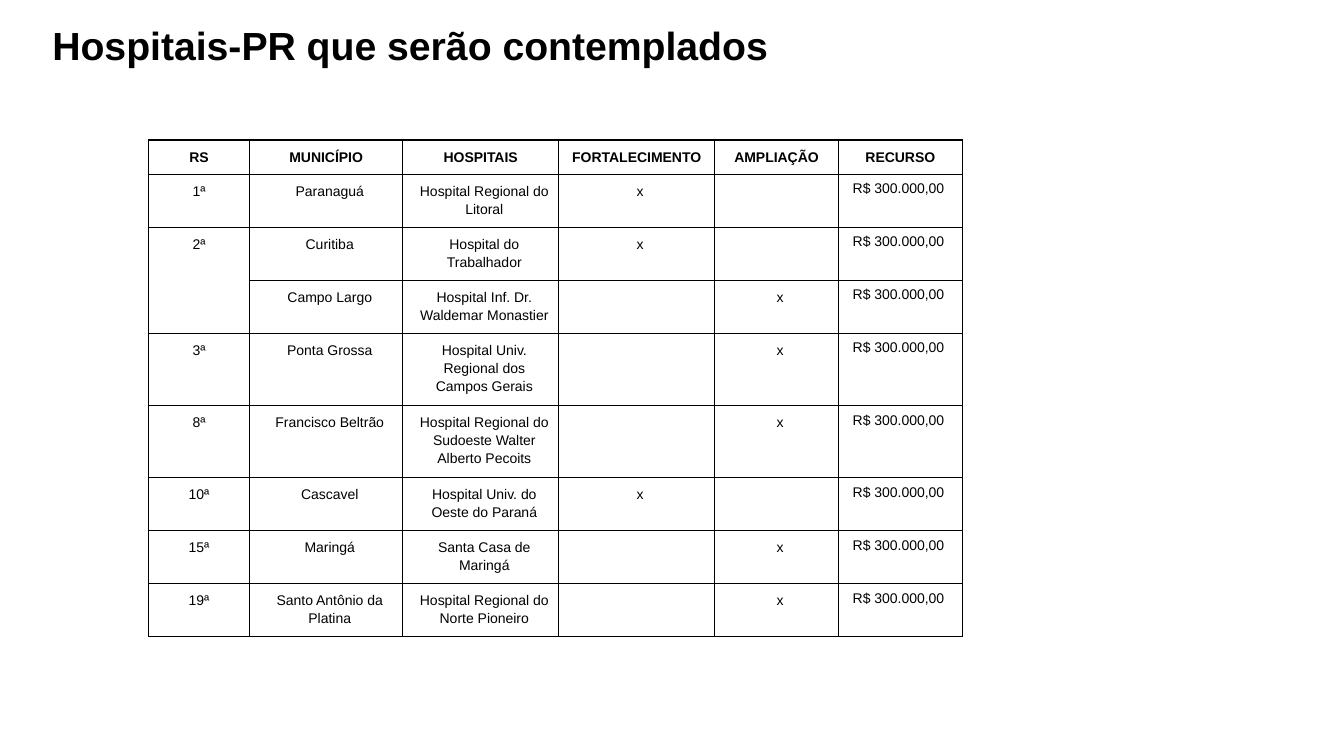
from dataclasses import dataclass

from lxml.etree import SubElement
from pptx import Presentation
from pptx.dml.color import RGBColor as Color
from pptx.enum.text import MSO_ANCHOR as Anchor, PP_ALIGN as Align
from pptx.oxml.ns import qn
from pptx.util import Cm, Pt


@dataclass(frozen=True)
class Theme:
    """Colours, typeface and type sizes."""
    ink: str = "000000"
    font: str = "Arial"
    title: int = 28
    body: int = 10
    rule: int = 1


HEADINGS = ("RS", "MUNICÍPIO", "HOSPITAIS", "FORTALECIMENTO", "AMPLIAÇÃO", "RECURSO")
GRANT = "R$ 300.000,00"
STRENGTHEN, EXPAND = ("x", ""), ("", "x")
HOSPITALS = (
    ("1ª", "Paranaguá", "Hospital Regional do Litoral", STRENGTHEN),
    ("2ª", "Curitiba", "Hospital do Trabalhador", STRENGTHEN),
    ("", "Campo Largo", "Hospital Inf. Dr. Waldemar Monastier", EXPAND),
    ("3ª", "Ponta Grossa", "Hospital Univ. Regional dos Campos Gerais", EXPAND),
    ("8ª", "Francisco Beltrão", "Hospital Regional do Sudoeste Walter Alberto Pecoits", EXPAND),
    ("10ª", "Cascavel", "Hospital Univ. do Oeste do Paraná", STRENGTHEN),
    ("15ª", "Maringá", "Santa Casa de Maringá", EXPAND),
    ("19ª", "Santo Antônio da Platina", "Hospital Regional do Norte Pioneiro", EXPAND),
)
COLUMN_WIDTHS = (2.55, 3.86, 3.93, 3.93, 3.12, 3.12)
HEADER_HEIGHT, TWO_LINES, THREE_LINES = 0.86, 1.33, 1.81
ROW_HEIGHTS = (HEADER_HEIGHT, *[TWO_LINES] * 3, *[THREE_LINES] * 2, *[TWO_LINES] * 3)
INSET = 0.18


class Page:
    """Draws styled elements on one slide."""

    def __init__(self, slide, theme):
        self.slide, self.theme = slide, theme

    def add_span(self, para, text, size, bold=False):
        span = para.add_run()
        span.text = text
        span.font.name, span.font.size, span.font.bold = self.theme.font, Pt(size), bold
        span.font.color.rgb = Color.from_string(self.theme.ink)

    def add_title(self, text, left, top, width, height):
        box = self.slide.shapes.add_textbox(Cm(left), Cm(top), Cm(width), Cm(height))
        box.text_frame.word_wrap = True
        self.add_span(box.text_frame.paragraphs[0], text, self.theme.title, bold=True)

    def add_border(self, cell):
        properties = cell._tc.get_or_add_tcPr()
        for side in ("lnL", "lnR", "lnT", "lnB"):
            line = SubElement(properties, qn(f"a:{side}"), w=str(Pt(self.theme.rule)))
            fill = SubElement(line, qn("a:solidFill"))
            SubElement(fill, qn("a:srgbClr"), val=self.theme.ink)

    def fill_cell(self, cell, text, heading, column):
        self.add_border(cell)
        cell.fill.background()
        cell.vertical_anchor = Anchor.TOP
        cell.margin_left = cell.margin_right = cell.margin_top = cell.margin_bottom = Cm(INSET)
        para = cell.text_frame.paragraphs[0]
        if not text:
            para.font.size = Pt(self.theme.body)
            return
        amount = not heading and column == len(COLUMN_WIDTHS) - 1
        para.alignment = Align.JUSTIFY if amount else Align.CENTER
        para.line_spacing = 1.0 if amount else 1.15
        if column and not heading:
            para._p.get_or_add_pPr().set("marL", str(Cm(INSET)))
        self.add_span(para, text, self.theme.body, bold=heading)

    def add_grid(self, rows, left, top):
        frame = self.slide.shapes.add_table(
            len(rows), len(COLUMN_WIDTHS), Cm(left), Cm(top),
            Cm(sum(COLUMN_WIDTHS)), Cm(sum(ROW_HEIGHTS)))
        table = frame.table
        table.first_row = table.horz_banding = False
        for column, width in zip(table.columns, COLUMN_WIDTHS):
            column.width = Cm(width)
        for index, (height, texts) in enumerate(zip(ROW_HEIGHTS, rows)):
            table.rows[index].height = Cm(height)
            for column, text in enumerate(texts):
                self.fill_cell(table.cell(index, column), text, index == 0, column)
        return table


def main():
    deck = Presentation()
    deck.slide_width, deck.slide_height = Cm(33.87), Cm(19.05)
    page = Page(deck.slides.add_slide(deck.slide_layouts[6]), Theme())
    page.add_title("Hospitais-PR que serão contemplados", 1.07, 0.41, 27.99, 1.45)
    rows = [HEADINGS]
    rows += [(region, city, name, *marks, GRANT) for region, city, name, marks in HOSPITALS]
    table = page.add_grid(rows, 3.74, 3.53)
    table.cell(2, 0).merge(table.cell(3, 0))
    deck.save("out.pptx")


if __name__ == "__main__":
    main()
